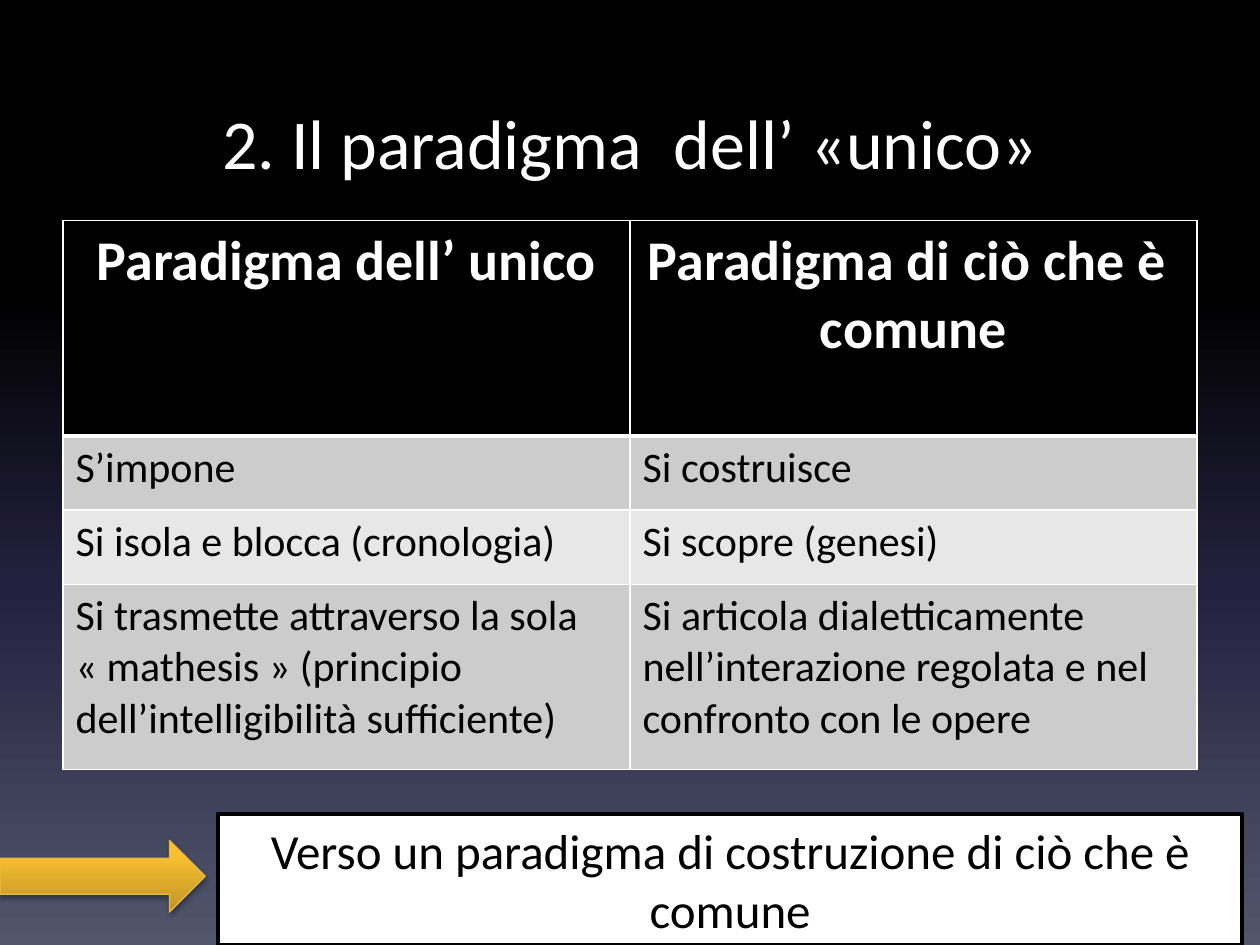
from dataclasses import dataclass

from lxml import etree
from pptx import Presentation
from pptx.dml.color import RGBColor
from pptx.enum.shapes import MSO_SHAPE
from pptx.enum.text import MSO_ANCHOR, PP_ALIGN
from pptx.oxml.ns import qn
from pptx.util import Emu, Inches, Pt

ARROW, RECT = MSO_SHAPE.RIGHT_ARROW, MSO_SHAPE.RECTANGLE
LEFT, CENTER = PP_ALIGN.LEFT, PP_ALIGN.CENTER
MIDDLE = MSO_ANCHOR.MIDDLE
TITLE_ONLY = 5
FONT = "Calibri"
SLIDE_W, SLIDE_H = Inches(10), Inches(7.5)

COLORS = {
    "black": "000000",
    "white": "FFFFFF",
    "band_dark": "CCCCCC",
    "band_light": "E7E7E7",
    "gold_line": "E7BA45",
}
NIGHT_STOPS = [(0, "000000"), (31, "000000"), (62, "24213E"), (100, "51566D")]
GOLD_STOPS = [(0, "BF9426"), (80, "F8C031"), (100, "FDC32D")]
ROW_HEIGHTS = [1.71, 0.59, 0.59, 1.47]
ROWS = [
    ("Paradigma dell’ unico", "Paradigma di ciò che è  comune"),
    ("S’impone", "Si costruisce"),
    ("Si isola e blocca (cronologia)", "Si scopre (genesi)"),
    ("Si trasmette attraverso la sola  « mathesis » (principio dell’intelligibilità sufficiente)",
     "Si articola dialetticamente nell’interazione regolata e nel confronto con le opere"),
]


@dataclass
class Box:
    """A rectangle in percent of the slide's width and height."""
    x: float
    y: float
    w: float
    h: float

    def emu(self) -> list[Emu]:
        return [Emu(round(share * side / 100)) for share, side in
                zip((self.x, self.y, self.w, self.h), (SLIDE_W, SLIDE_H) * 2)]


@dataclass
class TextStyle:
    size: float
    color: str
    align: PP_ALIGN = CENTER
    bold: bool = False


TITLE_STYLE = TextStyle(40, "white")
HEADER_STYLE = TextStyle(32, "white", bold=True)
BODY_STYLE = TextStyle(24, "black", LEFT)
CONCLUSION_STYLE = TextStyle(28, "black")

TITLE_BOX = Box(5, 6.67, 90, 16.67)
TABLE_BOX = Box(5, 23.33, 90, 58.13)
ARROW_BOX = Box(0, 88.93, 16.3, 7.6)
CONCLUSION_BOX = Box(17.3, 86.13, 81.3, 13.87)


def rgb(name: str) -> RGBColor:
    return RGBColor.from_string(COLORS[name])


def write(tf, text: str, style: TextStyle) -> None:
    tf.text = text
    tf.word_wrap = True
    p = tf.paragraphs[0]
    p.alignment = style.align
    font = p.runs[0].font
    font.name, font.size, font.bold = FONT, Pt(style.size), style.bold
    font.color.rgb = rgb(style.color)


def add_color(parent, hex_color: str):
    return etree.SubElement(parent, qn("a:srgbClr"), val=hex_color)


def set_gradient(owner, fill, stops: list, angle: int) -> None:
    """Fill with any number of stops; the angle runs counter-clockwise."""
    fill.gradient()
    fill.gradient_angle = angle
    gs_list = owner.element.find(".//" + qn("a:gsLst"))
    for gs in list(gs_list):
        gs_list.remove(gs)
    for percent, color in stops:
        add_color(etree.SubElement(gs_list, qn("a:gs"), pos=str(percent * 1000)), color)


def add_box(slide, kind: MSO_SHAPE, box: Box, line: str, width: float):
    sp = slide.shapes.add_shape(kind, *box.emu())
    sp.shadow.inherit = False
    sp.line.color.rgb, sp.line.width = rgb(line), Pt(width)
    return sp


def add_soft_shadow(sp) -> None:
    effects = sp.element.spPr.find(qn("a:effectLst"))
    shadow = etree.SubElement(effects, qn("a:outerShdw"), blurRad=str(Pt(3.1)),
                              dist=str(Pt(1.8)), dir="5400000", rotWithShape="0")
    etree.SubElement(add_color(shadow, COLORS["black"]), qn("a:alpha"), val="35000")


def set_borders(cell, top: float, bottom: float) -> None:
    widths = {"a:lnL": 1, "a:lnR": 1, "a:lnT": top, "a:lnB": bottom}
    tc_pr = cell._tc.get_or_add_tcPr()
    for i, (tag, width) in enumerate(widths.items()):
        ln = etree.Element(qn(tag), w=str(Pt(width)))
        add_color(etree.SubElement(ln, qn("a:solidFill")), COLORS["white"])
        tc_pr.insert(i, ln)


def add_comparison(slide) -> None:
    table = slide.shapes.add_table(len(ROWS), len(ROWS[0]), *TABLE_BOX.emu()).table
    for i, (texts, height) in enumerate(zip(ROWS, ROW_HEIGHTS)):
        table.rows[i].height = Inches(height)
        band = "black" if i == 0 else "band_dark" if i % 2 else "band_light"
        for cell, text in zip(table.rows[i].cells, texts):
            write(cell.text_frame, text, BODY_STYLE if i else HEADER_STYLE)
            cell.fill.solid()
            cell.fill.fore_color.rgb = rgb(band)
            set_borders(cell, top=3 if i == 1 else 1, bottom=3 if i == 0 else 1)


def main() -> None:
    prs = Presentation()
    prs.slide_width, prs.slide_height = SLIDE_W, SLIDE_H
    slide = prs.slides.add_slide(prs.slide_layouts[TITLE_ONLY])
    set_gradient(slide, slide.background.fill, NIGHT_STOPS, 270)

    title = slide.shapes.title
    title.left, title.top, title.width, title.height = TITLE_BOX.emu()
    write(title.text_frame, "2. Il paradigma  dell’ «unico»", TITLE_STYLE)
    title.text_frame.vertical_anchor = MIDDLE

    arrow = add_box(slide, ARROW, ARROW_BOX, "gold_line", 0.75)
    set_gradient(arrow, arrow.fill, GOLD_STOPS, 90)
    add_soft_shadow(arrow)

    conclusion = add_box(slide, RECT, CONCLUSION_BOX, "black", 2)
    conclusion.fill.solid()
    conclusion.fill.fore_color.rgb = rgb("white")
    write(conclusion.text_frame, "Verso un paradigma di costruzione di ciò che è comune",
          CONCLUSION_STYLE)
    conclusion.text_frame.vertical_anchor = MIDDLE

    add_comparison(slide)
    prs.save("out.pptx")


if __name__ == "__main__":
    main()
